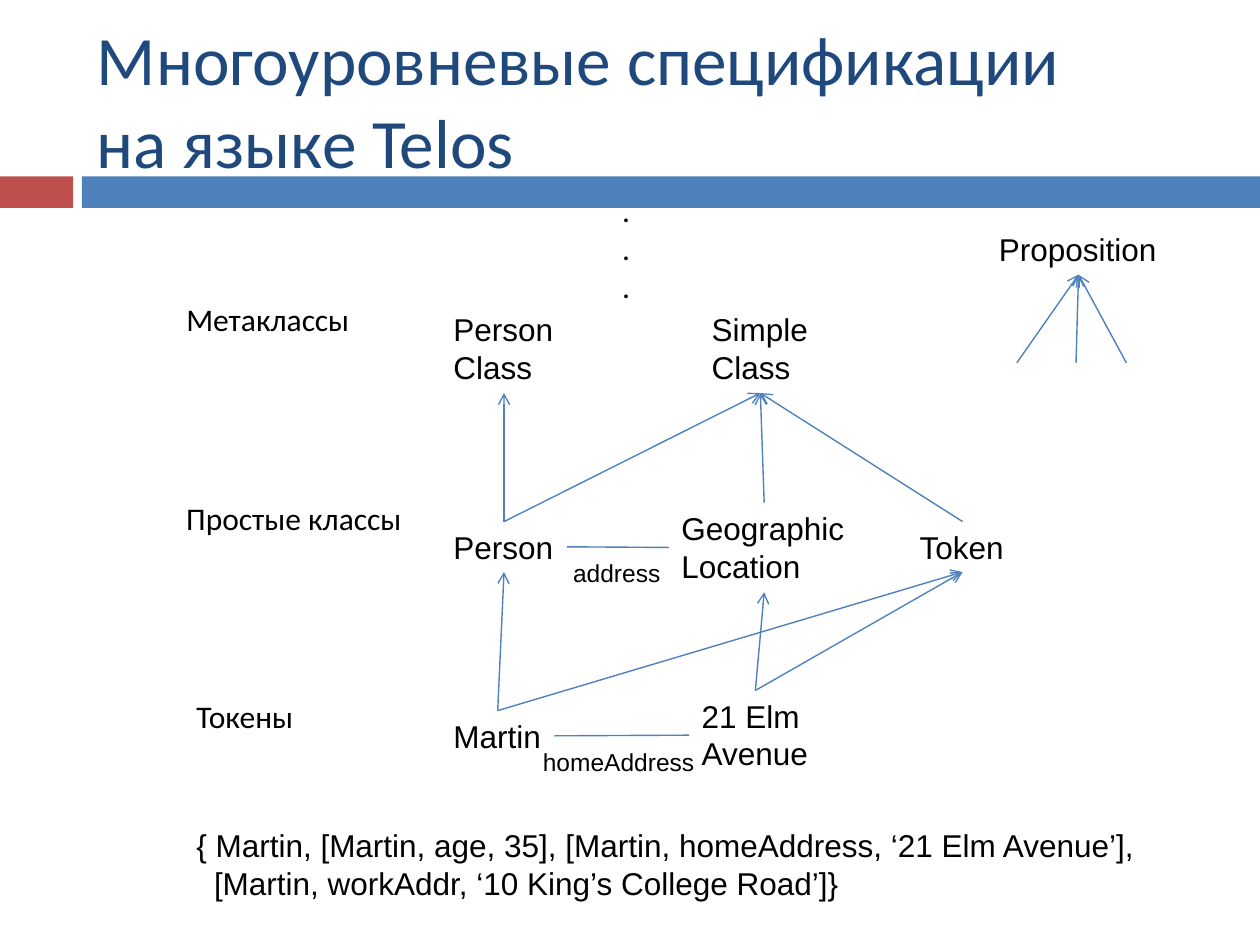
from dataclasses import dataclass

from lxml import etree
from pptx import Presentation
from pptx.dml.color import RGBColor
from pptx.enum.shapes import MSO_CONNECTOR as CONN, MSO_SHAPE as SHAPE
from pptx.enum.text import MSO_ANCHOR as ANCHOR, MSO_AUTO_SIZE as AUTO
from pptx.oxml.ns import qn
from pptx.util import Inches, Pt

TOP, LEFT, BOTTOM, RIGHT = range(4)


@dataclass(frozen=True)
class Theme:
    title: str = "1F497D"
    text: str = "000000"
    blue: str = "4F81BD"
    red: str = "C0504D"
    title_size: float = 39.6
    body_size: float = 18
    small_size: float = 14
    line_width: float = 0.79
    heading_font: str = "Calibri"
    diagram_font: str = "Arial"


class Builder:
    def __init__(self, slide, theme):
        self.s = slide
        self.t = theme

    def bar(self, x, y, w, h, color):
        sp = self.s.shapes.add_shape(SHAPE.RECTANGLE, Inches(x), Inches(y), Inches(w), Inches(h))
        sp.shadow.inherit = False
        sp.fill.solid()
        sp.fill.fore_color.rgb = RGBColor.from_string(color)
        sp.line.fill.background()

    def text(self, text, x, y, w, h, font=None, size=None, color=None):
        sp = self.s.shapes.add_textbox(Inches(x), Inches(y), Inches(w), Inches(h))
        tf = sp.text_frame
        tf.word_wrap = False
        tf.auto_size = AUTO.SHAPE_TO_FIT_TEXT
        tf.text = text
        for p in tf.paragraphs:
            p.font.name = font or self.t.diagram_font
            p.font.size = Pt(size or self.t.body_size)
            p.font.color.rgb = RGBColor.from_string(color or self.t.text)
        return sp

    def title(self, text, x, y, w, h):
        sp = self.text(text, x, y, w, h, self.t.heading_font, self.t.title_size, self.t.title)
        tf = sp.text_frame
        tf.auto_size = AUTO.NONE
        tf.word_wrap = True
        tf.vertical_anchor = ANCHOR.MIDDLE

    def line(self, start, end, arrow=True):
        """Each end is a (shape, side) pair or an (x, y) point in inches."""
        cn = self.s.shapes.add_connector(CONN.STRAIGHT, 0, 0, 0, 0)
        if isinstance(start[0], float):
            cn.begin_x, cn.begin_y = map(Inches, start)
        else:
            cn.begin_connect(*start)
        cn.end_connect(*end)
        cn.line.color.rgb = RGBColor.from_string(self.t.blue)
        cn.line.width = Pt(self.t.line_width)
        if arrow:
            etree.SubElement(cn.line._get_or_add_ln(), qn("a:tailEnd"), type="arrow")
        etree.SubElement(cn._element.spPr, qn("a:effectLst"))


def main():
    prs = Presentation()
    prs.slide_width, prs.slide_height = Inches(10), Inches(7.5)
    theme = Theme()
    b = Builder(prs.slides.add_slide(prs.slide_layouts[6]), theme)

    # Title and band
    b.bar(0, 1.4, 0.58, 0.25, theme.red)
    b.bar(0.65, 1.4, 9.35, 0.25, theme.blue)
    b.title("Многоуровневые спецификации\vна языке Telos", 0.67, 0.25, 8.92, 1.08)

    # Level names
    for label, x, y, w in (
        ("Метаклассы", 1.38, 2.33, 1.51),
        ("Простые классы", 1.38, 3.91, 1.93),
        ("Токены", 1.46, 5.48, 0.98),
    ):
        b.text(label, x, y, w, 0.4, theme.heading_font)
    b.text(".\n.\n.", 4.84, 1.47, 0.27, 1.01, theme.heading_font)

    # Nodes
    person_class = b.text("Person\nClass", 3.5, 2.41, 1, 0.71)
    simple_class = b.text("Simple\vClass", 5.55, 2.41, 0.97, 0.71)
    person = b.text("Person", 3.5, 4.14, 1, 0.4)
    location = b.text("Geographic\vLocation", 5.31, 3.99, 1.51, 0.71)
    token = b.text("Token", 7.2, 4.14, 0.88, 0.4)
    martin = b.text("Martin", 3.5, 5.64, 0.9, 0.4)
    avenue = b.text("21 Elm\vAvenue", 5.47, 5.48, 1.05, 0.71)
    proposition = b.text("Proposition", 7.83, 1.78, 1.46, 0.4)

    # Instance-of arrows
    for child, parent in (
        (martin, person), (avenue, location), (martin, token), (avenue, token),
        (person, person_class), (person, simple_class),
        (location, simple_class), (token, simple_class),
    ):
        b.line((child, TOP), (parent, BOTTOM))
    for x in (8.07, 8.54, 8.94):
        b.line((x, 2.88), (proposition, BOTTOM))

    # Attributes
    b.line((martin, RIGHT), (avenue, LEFT), arrow=False)
    b.line((person, RIGHT), (location, LEFT), arrow=False)
    b.text("homeAddress", 4.21, 5.88, 1.41, 0.34, size=theme.small_size)
    b.text("address", 4.45, 4.38, 0.9, 0.34, size=theme.small_size)

    # Proposition set, second line indented
    sp = b.text(
        "{ Martin, [Martin, age, 35], [Martin, homeAddress, ‘21 Elm Avenue’],\n"
        "[Martin, workAddr, ‘10 King’s College Road’]}",
        1.46, 6.51, 7.71, 0.71,
    )
    p = sp.text_frame.paragraphs[1]
    p._p.get_or_add_pPr().set("marL", str(Inches(0.14)))

    prs.save("out.pptx")


if __name__ == "__main__":
    main()
